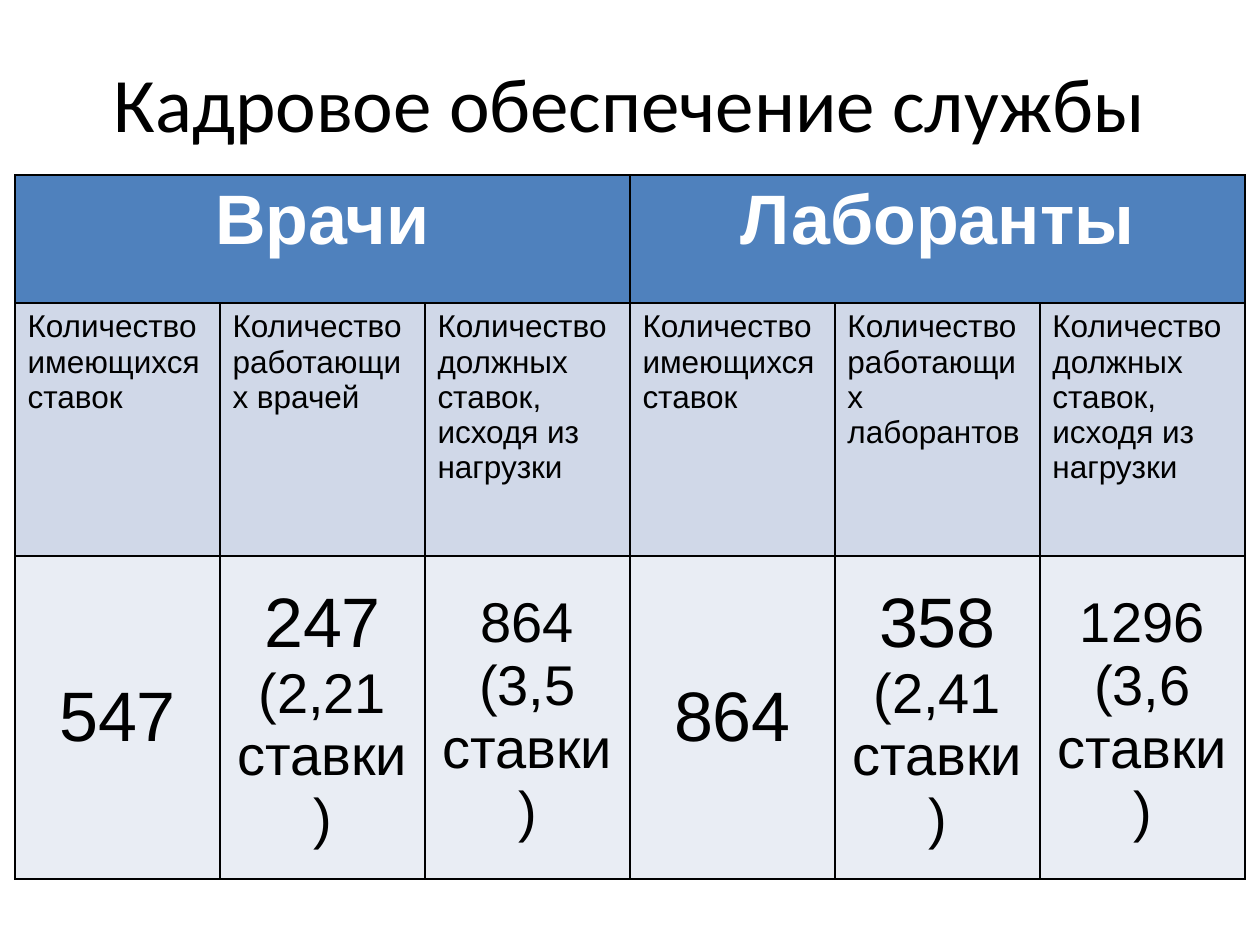
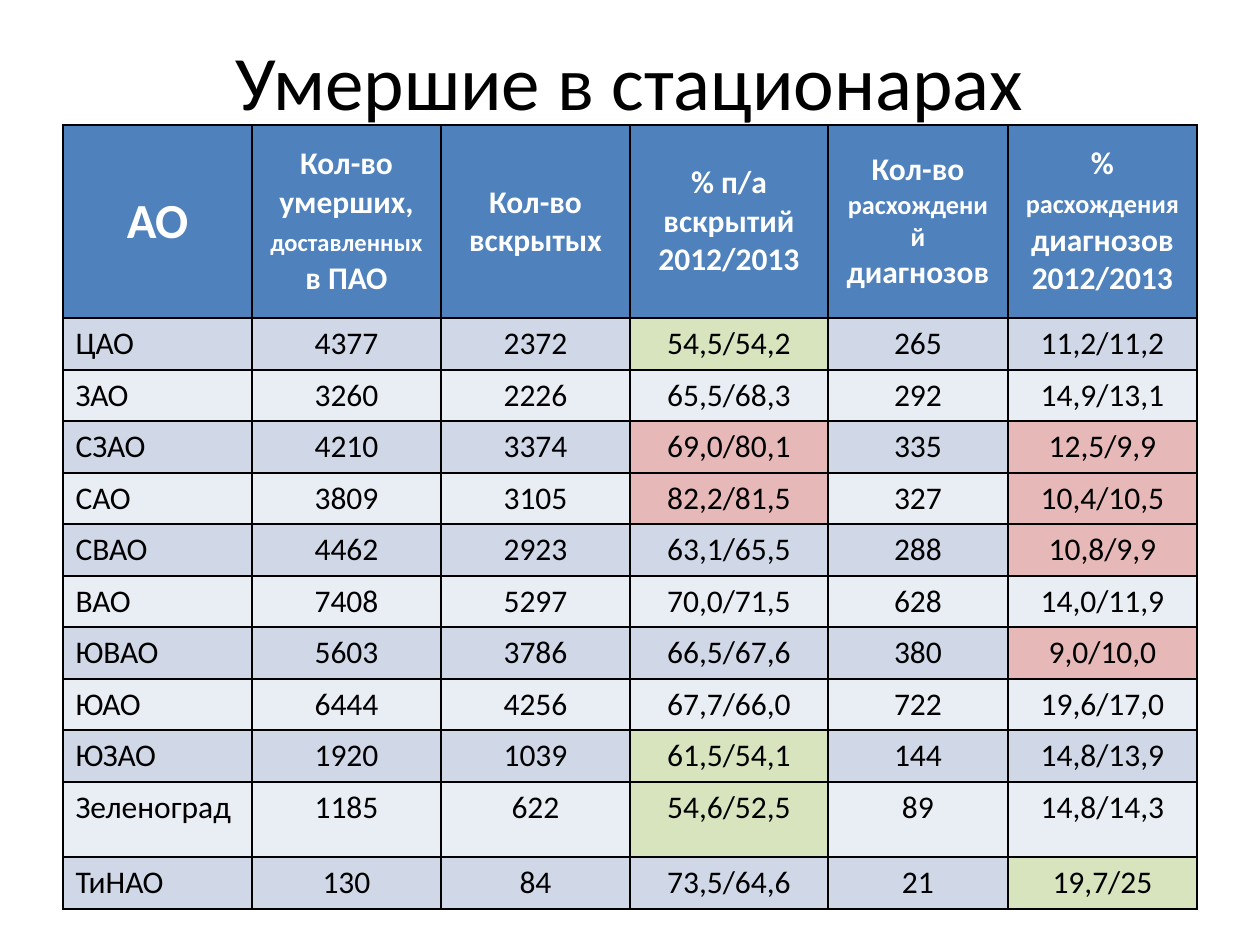
from lxml.etree import SubElement
from pptx import Presentation
from pptx.dml.color import RGBColor
from pptx.enum.text import MSO_ANCHOR as Anchor, PP_ALIGN as Align
from pptx.oxml.ns import qn
from pptx.util import Pt

EMU_PER_PX = 914400 / 126
BLACK, WHITE = "000000", "FFFFFF"
HEADER, BAND_DARK, BAND_LIGHT = "4F81BD", "D0D8E8", "E9EDF4"
GREEN, RED = "D7E4BD", "E6B9B8"

TITLE = {"name": "Calibri", "size": Pt(44), "bold": False}
STAFF_HEAD = {"name": "Arial", "size": Pt(40), "bold": True}
STAFF_LABEL = {"name": "Arial", "size": Pt(18), "bold": False}
STAFF_VALUE = {"name": "Arial", "size": Pt(40), "bold": False}
DEATHS_HEAD = {"name": "Calibri", "size": Pt(18), "bold": True}
DEATHS_VALUE = {"name": "Calibri", "size": Pt(18), "bold": False}

STAFF_GROUPS = [
    ("Врачи", "врачей", [
        [[("547", 40)]],
        [[("247", 40)], [("(2,21 ставки)", 32)]],
        [[("864 (3,5 ставки)", 32)]],
    ]),
    ("Лаборанты", "лаборантов", [
        [[("864", 40)]],
        [[("358", 40)], [("(2,41 ставки)", 32)]],
        [[("1296 (3,6 ставки)", 32)]],
    ]),
]

DEATHS_HEADS = [
    [[("АО", 28)]],
    [[("Кол-во умерших, ", 18), ("доставленных", 14), (" в ПАО", 18)]],
    [[("Кол-во вскрытых", 18)]],
    [[("% п/а вскрытий", 18)], [("2012/2013", 18)]],
    [[("Кол-во ", 18), ("расхождений ", 15), ("диагнозов", 18)]],
    [[("% ", 18), ("расхождения", 15), (" диагнозов", 18)], [("2012/2013", 18)]],
]

DISTRICTS = [
    ("ЦАО", "4377", "2372", "54,5/54,2", "265", "11,2/11,2"),
    ("ЗАО", "3260", "2226", "65,5/68,3", "292", "14,9/13,1"),
    ("СЗАО", "4210", "3374", "69,0/80,1", "335", "12,5/9,9"),
    ("САО", "3809", "3105", "82,2/81,5", "327", "10,4/10,5"),
    ("СВАО", "4462", "2923", "63,1/65,5", "288", "10,8/9,9"),
    ("ВАО", "7408", "5297", "70,0/71,5", "628", "14,0/11,9"),
    ("ЮВАО", "5603", "3786", "66,5/67,6", "380", "9,0/10,0"),
    ("ЮАО", "6444", "4256", "67,7/66,0", "722", "19,6/17,0"),
    ("ЮЗАО", "1920", "1039", "61,5/54,1", "144", "14,8/13,9"),
    ("Зеленоград", "1185", "622", "54,6/52,5", "89", "14,8/14,3"),
    ("ТиНАО", "130", "84", "73,5/64,6", "21", "19,7/25"),
]

AUTOPSY_RATE, MISMATCH_RATE = 3, 5
HIGHLIGHTS = {
    ("ЦАО", AUTOPSY_RATE): GREEN,
    ("СЗАО", AUTOPSY_RATE): RED,
    ("САО", AUTOPSY_RATE): RED,
    ("ЮЗАО", AUTOPSY_RATE): GREEN,
    ("Зеленоград", AUTOPSY_RATE): GREEN,
    ("СЗАО", MISMATCH_RATE): RED,
    ("САО", MISMATCH_RATE): RED,
    ("СВАО", MISMATCH_RATE): RED,
    ("ЮВАО", MISMATCH_RATE): RED,
    ("ТиНАО", MISMATCH_RATE): GREEN,
}


def px(length):
    return round(length * EMU_PER_PX)


def rgb(color):
    return RGBColor.from_string(color)


def write_text(frame, paragraphs, style, color, align):
    for index, spans in enumerate(paragraphs):
        para = frame.paragraphs[0] if index == 0 else frame.add_paragraph()
        para.alignment = align
        for text, size in spans:
            span = para.add_run()
            span.text = text
            for key, value in {**style, "size": Pt(size)}.items():
                setattr(span.font, key, value)
            span.font.color.rgb = rgb(color)


def add_title(page, text, top):
    box = page.shapes.add_textbox(px(63), px(top), px(1134), px(128))
    box.text_frame.word_wrap = True
    box.text_frame.vertical_anchor = Anchor.MIDDLE
    write_text(box.text_frame, [[(text, 44)]], TITLE, BLACK, Align.CENTER)


def add_grid(page, left, top, widths, heights):
    frame = page.shapes.add_table(
        len(heights), len(widths), px(left), px(top), px(sum(widths)), px(sum(heights)))
    table = frame.table
    table.first_row = table.horz_banding = False
    for column, width in zip(table.columns, widths):
        column.width = px(width)
    for row, height in zip(table.rows, heights):
        row.height = px(height)
    for cell in table.iter_cells():
        add_borders(cell)
    return table


def add_borders(cell):
    properties = cell._tc.get_or_add_tcPr()
    for side in ("lnL", "lnR", "lnT", "lnB"):
        line = SubElement(properties, qn(f"a:{side}"), w=str(Pt(1)))
        fill = SubElement(line, qn("a:solidFill"))
        SubElement(fill, qn("a:srgbClr"), val=BLACK)


def fill_cell(cell, paragraphs, style, fill, color=BLACK,
              align=Align.CENTER, anchor=Anchor.TOP):
    cell.fill.solid()
    cell.fill.fore_color.rgb = rgb(fill)
    cell.vertical_anchor = anchor
    write_text(cell.text_frame, paragraphs, style, color, align)


def build_staff_page(page):
    add_title(page, "Кадровое обеспечение службы", 38)
    table = add_grid(page, 15, 175, [205] * 6, [128, 253, 323])
    for group, (name, workers, values) in enumerate(STAFF_GROUPS):
        first = group * 3
        table.cell(0, first).merge(table.cell(0, first + 2))
        fill_cell(table.cell(0, first), [[(name, 40)]], STAFF_HEAD, HEADER, WHITE)
        labels = [
            "Количество имеющихся ставок",
            f"Количество работающих {workers}",
            "Количество должных ставок, исходя из нагрузки",
        ]
        for column, (label, value) in enumerate(zip(labels, values), first):
            fill_cell(table.cell(1, column), [[(label, 18)]], STAFF_LABEL,
                      BAND_DARK, align=Align.LEFT)
            fill_cell(table.cell(2, column), value, STAFF_VALUE,
                      BAND_LIGHT, anchor=Anchor.MIDDLE)


def build_deaths_page(page):
    add_title(page, "Умершие в стационарах", 16)
    heights = [193] + [51 + row % 2 for row in range(1, 10)] + [75, 52]
    table = add_grid(page, 63, 125, [189, 189, 189, 198, 180, 189], heights)
    for column, head in enumerate(DEATHS_HEADS):
        fill_cell(table.cell(0, column), head, DEATHS_HEAD, HEADER, WHITE,
                  anchor=Anchor.MIDDLE)
    for row, values in enumerate(DISTRICTS, 1):
        band = BAND_DARK if row % 2 else BAND_LIGHT
        for column, value in enumerate(values):
            fill_cell(table.cell(row, column), [[(value, 18)]], DEATHS_VALUE,
                      HIGHLIGHTS.get((values[0], column), band),
                      align=Align.CENTER if column else Align.LEFT)


def main():
    deck = Presentation()
    deck.slide_width, deck.slide_height = px(1260), px(945)
    blank = deck.slide_layouts[6]
    for build_page in (build_staff_page, build_deaths_page):
        build_page(deck.slides.add_slide(blank))
    deck.save("out.pptx")


if __name__ == "__main__":
    main()
